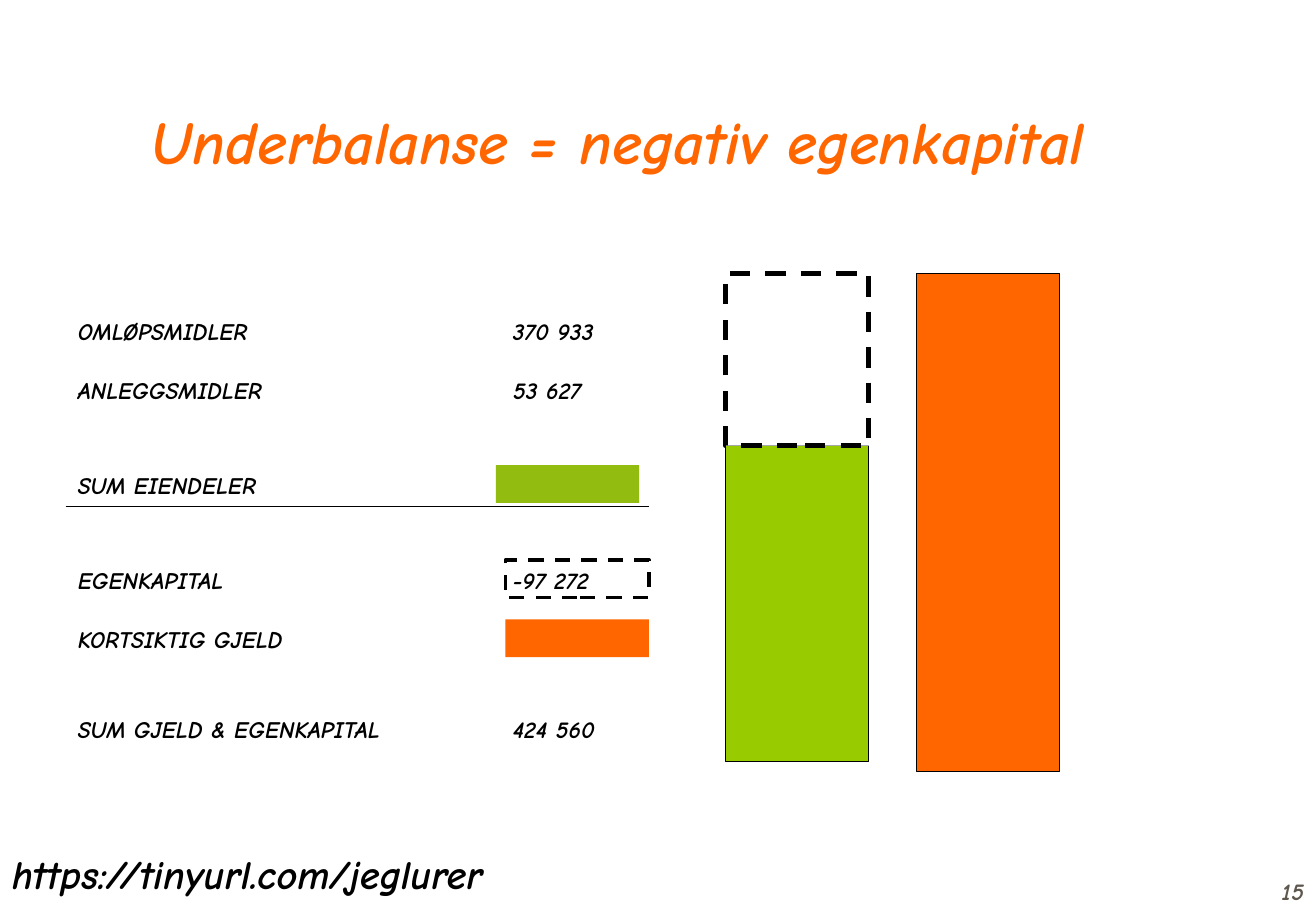
from itertools import accumulate
from pptx import Presentation
from pptx.dml.color import RGBColor
from pptx.enum.dml import MSO_LINE_DASH_STYLE as Dash
from pptx.enum.shapes import MSO_SHAPE as Shape
from pptx.enum.text import MSO_ANCHOR as Anchor, PP_ALIGN as Align
from pptx.oxml.ns import qn
from pptx.util import Inches, Pt
from lxml.etree import SubElement

WIDTH, HEIGHT = 10.83, 7.5
FONT = "Comic Neue"
BLACK, WHITE, ORANGE, GREEN, OLIVE, GREY = "000000", "FFFFFF", "FF6600", "99CC00", "93BC10", "5E574E"
NO_STYLE = "{2D5ABB26-0587-4C30-8999-92F81FD0307C}"

TEXTS = [
    ("Underbalanse = negativ egenkapital", (0.48, 0.25, 9.21, 1.25), 36, ORANGE, Align.CENTER, Anchor.BOTTOM),
    ("15", (WIDTH - 2.98, HEIGHT - 0.5, 2.98, 0.5), 14, GREY, Align.RIGHT, Anchor.BOTTOM),
    ("https://tinyurl.com/jeglurer", (0, 6.94, 4.88, 0.5), 24, BLACK, Align.LEFT, Anchor.TOP),
]
BALANCE = [
    ("OMLØPSMIDLER", "370 933", 0.49),
    ("ANLEGGSMIDLER", "53 627", 0.49),
    ("", "", 0.37),
    ("SUM EIENDELER", "", 0.41),
    ("", "", 0.37),
    ("EGENKAPITAL", "-97 272", 0.41),
    ("KORTSIKTIG GJELD", "", 0.49),
    ("", "", 0.37),
    ("SUM GJELD & EGENKAPITAL", "424 560", 0.37),
]
TOTAL_ROW, EQUITY_ROW, DEBT_ROW = 3, 5, 6
TABLE_LEFT, TABLE_TOP = 0.54, 2.41
COLUMNS = (3.58, 1.22)
BAR_WIDTH, BAR_TOP, TAG_HEIGHT, TAG_GAP = 1.18, 2.25, 0.31, 0.03
ASSETS_LEFT, DEBT_LEFT = 5.97, 7.54
EQUITY_HEIGHT, ASSETS_HEIGHT, DEBT_HEIGHT = 1.42, 2.6, 4.1

row_bottoms = list(accumulate((row[2] for row in BALANCE), initial=TABLE_TOP))[1:]
tag_left = TABLE_LEFT + sum(COLUMNS) - BAR_WIDTH


def color(value):
    return RGBColor.from_string(value)


def tag_top(row):
    return row_bottoms[row] - TAG_GAP - TAG_HEIGHT


def write(frame, text, size, ink, align=Align.LEFT):
    paragraph = frame.paragraphs[0]
    paragraph.alignment = align
    if not text:
        SubElement(paragraph._p, qn("a:endParaRPr"), sz=str(size * 100))
        return
    run = paragraph.add_run()
    run.text = text
    for name, value in dict(name=FONT, size=Pt(size), bold=True, italic=True).items():
        setattr(run.font, name, value)
    run.font.color.rgb = color(ink)


def add_text(slide, text, box, size, ink, align, anchor):
    frame = slide.shapes.add_textbox(*map(Inches, box)).text_frame
    frame.word_wrap = True
    frame.vertical_anchor = anchor
    write(frame, text, size, ink, align)


def add_bottom_border(cell):
    line = SubElement(cell._tc.get_or_add_tcPr(), qn("a:lnB"), w=str(Pt(1)))
    SubElement(SubElement(line, qn("a:solidFill")), qn("a:srgbClr"), val=BLACK)


def add_balance(slide):
    box = (TABLE_LEFT, TABLE_TOP, sum(COLUMNS), sum(row[2] for row in BALANCE))
    table = slide.shapes.add_table(len(BALANCE), len(COLUMNS), *map(Inches, box)).table
    table.first_row = table.horz_banding = False
    table._tbl.tblPr.find(qn("a:tableStyleId")).text = NO_STYLE
    for column, width in zip(table.columns, COLUMNS):
        column.width = Inches(width)
    for index, (label, amount, height) in enumerate(BALANCE):
        table.rows[index].height = Inches(height)
        for cell, text in zip(table.rows[index].cells, (label, amount)):
            cell.vertical_anchor = Anchor.BOTTOM
            write(cell.text_frame, text, 14, BLACK)
            if index == TOTAL_ROW:
                add_bottom_border(cell)
            cell.fill.background()


def add_block(slide, left, top, height, fill, line_width, dash):
    shape = slide.shapes.add_shape(Shape.RECTANGLE, *map(Inches, (left, top, BAR_WIDTH, height)))
    shape.shadow.inherit = False
    if fill:
        shape.fill.solid()
        shape.fill.fore_color.rgb = color(fill)
    else:
        shape.fill.background()
    if line_width:
        shape.line.color.rgb = color(BLACK)
        shape.line.width = Pt(line_width)
        shape.line.dash_style = dash
    else:
        shape.line.fill.background()


BLOCKS = [
    (DEBT_LEFT, BAR_TOP, DEBT_HEIGHT, ORANGE, 0.75, None),
    (tag_left, tag_top(DEBT_ROW), TAG_HEIGHT, ORANGE, 0, None),
    (ASSETS_LEFT, BAR_TOP + EQUITY_HEIGHT, ASSETS_HEIGHT, GREEN, 0.75, None),
    (tag_left - 0.08, tag_top(TOTAL_ROW), TAG_HEIGHT, OLIVE, 0, None),
    (ASSETS_LEFT, BAR_TOP, EQUITY_HEIGHT, WHITE, 3, Dash.DASH),
    (tag_left, tag_top(EQUITY_ROW), TAG_HEIGHT, None, 2.25, Dash.DASH),
]


def main():
    presentation = Presentation()
    presentation.slide_width, presentation.slide_height = Inches(WIDTH), Inches(HEIGHT)
    slide = presentation.slides.add_slide(presentation.slide_layouts[6])
    add_balance(slide)
    for block in BLOCKS:
        add_block(slide, *block)
    for text in TEXTS:
        add_text(slide, *text)
    presentation.save("out.pptx")


if __name__ == "__main__":
    main()
